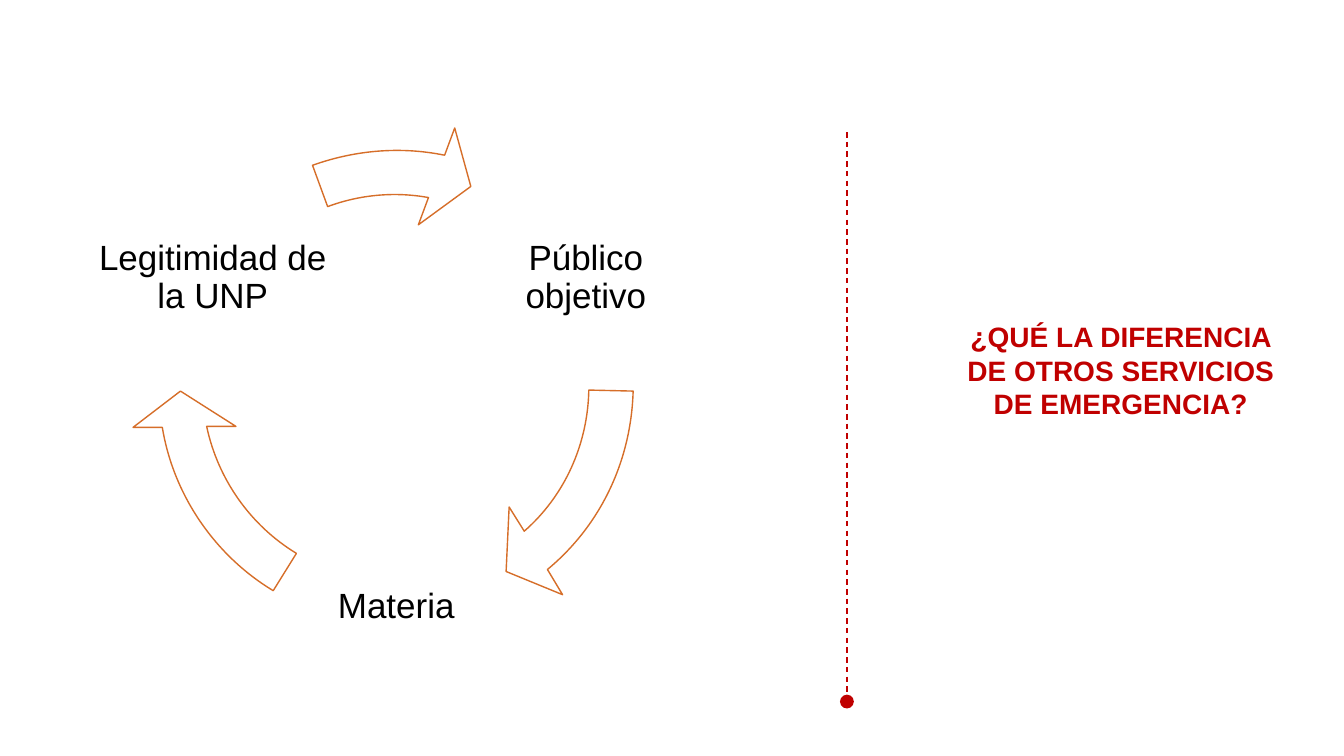
from lxml.etree import SubElement
from pptx import Presentation
from pptx.dml.color import RGBColor
from pptx.enum.dml import MSO_LINE
from pptx.enum.text import MSO_ANCHOR, MSO_AUTO_SIZE, PP_ALIGN
from pptx.oxml.ns import qn
from pptx.util import Inches, Pt

COLORS = {"red": "C00000", "orange": "D66E29", "black": "000000", "white": "FFFFFF"}


def add_label(page, text, place, size, color, bold=False):
    box = page.shapes.add_textbox(*[Inches(value) for value in place])
    frame = box.text_frame
    frame.word_wrap = True
    para = frame.paragraphs[0]
    para.alignment = PP_ALIGN.CENTER
    span = para.add_run()
    span.text = text
    span.font.name = "Arial"
    span.font.size = Pt(size)
    span.font.bold = bold
    span.font.color.rgb = RGBColor.from_string(COLORS[color])
    return frame


def add_outline(page, place, commands, color):
    """Freeform that fills the given frame, with true curves in its outline."""
    left, top, width, height = [Inches(value) for value in place]
    builder = page.shapes.build_freeform(left, top)
    builder.add_line_segments([(left + width, top + height)], close=False)
    shape = builder.convert_to_shape()
    route = shape._element.spPr.find(".//" + qn("a:path"))
    for child in list(route):
        route.remove(child)
    for name, points in commands:
        command = SubElement(route, qn("a:" + name))
        for x, y in points:
            SubElement(command, qn("a:pt"), x=str(Inches(x) - left), y=str(Inches(y) - top))
    shape.shadow.inherit = False
    shape.line.color.rgb = RGBColor.from_string(COLORS[color])
    shape.line.width = Pt(1)
    return shape


deck = Presentation()
deck.slide_width, deck.slide_height = Inches(13.33), Inches(7.5)
page = deck.slides.add_slide(deck.slide_layouts[6])

# Dashed divider ending in a dot
divider = add_outline(page, (8, 1.31, 0.41, 5.65),
                      [("moveTo", [(8.4, 1.31)]), ("lnTo", [(8.4, 6.96)])], "red")
divider.fill.background()
divider.line.dash_style = MSO_LINE.DASH
SubElement(divider.line._get_or_add_ln(), qn("a:tailEnd"), type="oval", w="lg", len="lg")

# Question
question = add_label(page, "¿QUÉ LA DIFERENCIA DE OTROS SERVICIOS DE EMERGENCIA?",
                     (9.41, 3.14, 3.41, 1.33), 20, "red", bold=True)
question.margin_left = question.margin_right = Inches(0.07)
question.margin_top = question.margin_bottom = Inches(0.03)
question.auto_size = MSO_AUTO_SIZE.SHAPE_TO_FIT_TEXT

# Cycle: label, its place, then the arrow's outer curve, head and inner curve
cycle = [
    ("Público objetivo", (4.69, 1.64, 2.24, 2.24),
     [(6.28, 3.88), (6.26, 4.57), (5.96, 5.21), (5.43, 5.65)],
     [(5.58, 5.9), (5.02, 5.67), (5.05, 5.03)],
     [(5.2, 5.27), (5.6, 4.92), (5.83, 4.41), (5.84, 3.87)]),
    ("Materia", (2.81, 4.9, 2.24, 2.24),
     [(2.71, 5.86), (2.13, 5.51), (1.72, 4.91), (1.61, 4.24)],
     [(1.32, 4.24), (1.79, 3.88), (2.34, 4.23)],
     [(2.05, 4.23), (2.16, 4.75), (2.48, 5.21), (2.94, 5.49)]),
    ("Legitimidad de la UNP", (0.93, 1.64, 2.36, 2.24),
     [(3.1, 1.64), (3.52, 1.49), (3.97, 1.45), (4.41, 1.54)],
     [(4.51, 1.27), (4.67, 1.85), (4.15, 2.23)],
     [(4.25, 1.96), (3.92, 1.9), (3.57, 1.93), (3.25, 2.05)]),
]
for text, place, outer, head, inner in cycle:
    frame = add_label(page, text, place, 25, "black")
    frame.vertical_anchor = MSO_ANCHOR.MIDDLE
    frame.margin_left = frame.margin_right = Inches(0.04)
    frame.margin_top = frame.margin_bottom = Inches(0.04)
    frame.paragraphs[0].line_spacing = 0.9

    commands = [("moveTo", outer[:1]), ("cubicBezTo", outer[1:])]
    commands += [("lnTo", [corner]) for corner in head + inner[:1]]
    commands += [("cubicBezTo", inner[1:]), ("close", [])]
    arrow = add_outline(page, (1.28, 1.2, 5.28, 5.28), commands, "orange")
    arrow.fill.solid()
    arrow.fill.fore_color.rgb = RGBColor.from_string(COLORS["white"])

deck.save("out.pptx")
